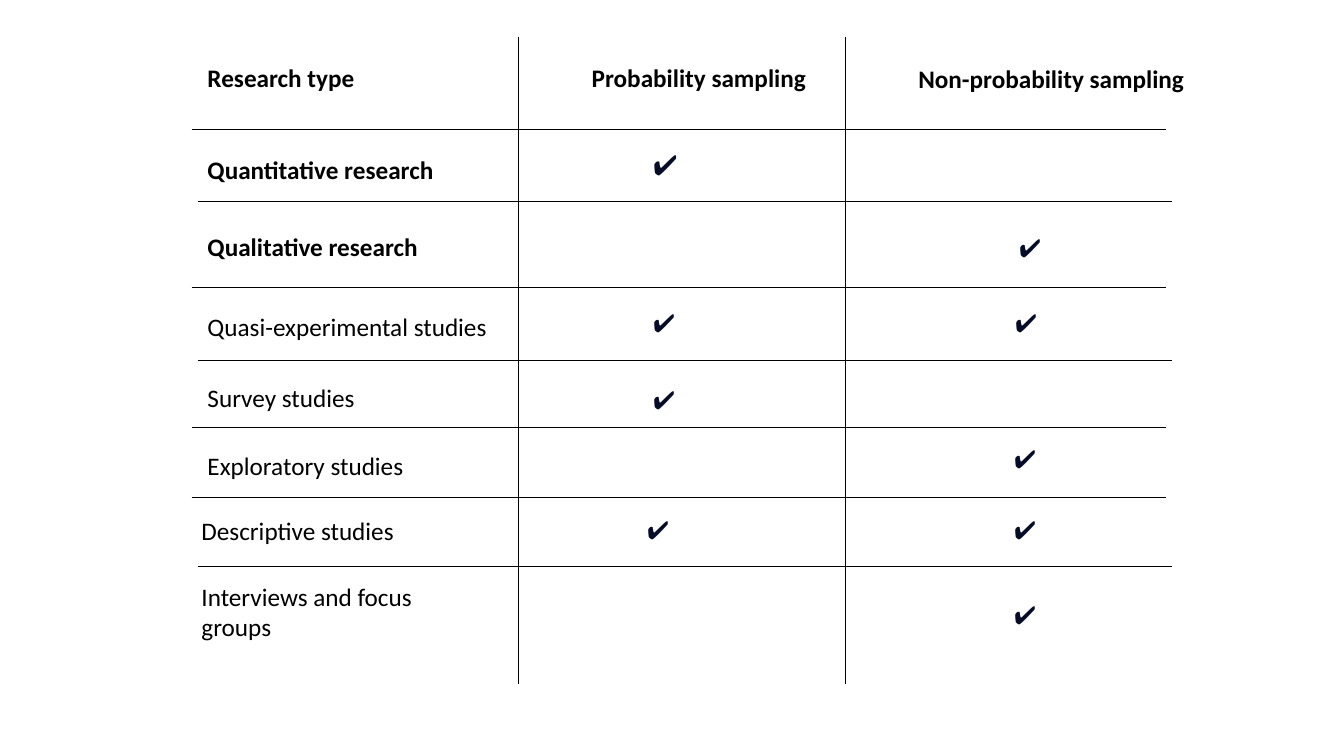
import pptx
import pptx.util
import pptx.dml.color
import pptx.enum.shapes
import pptx.enum.text
from lxml import etree
from pptx.util import Inches

BLACK = "000000"
NAVY = "040C28"
LABEL_WIDTH = 2.87
LINE_HEIGHT = 0.4
CHECK = "✔"

# text, left, top
HEADERS = [
    ("Research type", 1.96, 0.57),
    ("Probability sampling", 5.77, 0.57),
    ("Non-probability sampling", 9.01, 0.58),
]
# text, bold, left, top, width, height, check marks as (left, top, width, height, size)
ROWS = [
    ("Quantitative research", True, 1.96, 1.48, LABEL_WIDTH, LINE_HEIGHT,
     [(6.38, 1.41, 0.38, 0.44, 20)]),
    ("Qualitative research", True, 1.96, 2.25, LABEL_WIDTH, LINE_HEIGHT,
     [(10.01, 2.26, 0.47, LINE_HEIGHT, 18)]),
    ("Quasi-experimental studies", False, 1.96, 3.04, 2.97, LINE_HEIGHT,
     [(6.38, 3.0, 0.47, LINE_HEIGHT, 18), (9.97, 3.0, 0.47, LINE_HEIGHT, 18)]),
    ("Survey studies", False, 1.96, 3.74, LABEL_WIDTH, LINE_HEIGHT,
     [(6.38, 3.76, 0.47, LINE_HEIGHT, 18)]),
    ("Exploratory studies", False, 1.96, 4.42, LABEL_WIDTH, LINE_HEIGHT,
     [(9.96, 4.35, 0.47, LINE_HEIGHT, 18)]),
    ("Descriptive studies", False, 1.9, 5.06, LABEL_WIDTH, LINE_HEIGHT,
     [(6.32, 5.05, 0.47, LINE_HEIGHT, 18), (9.96, 5.05, 0.47, LINE_HEIGHT, 18)]),
    ("Interviews and focus groups", False, 1.9, 5.72, LABEL_WIDTH, 0.71,
     [(9.96, 5.9, 0.47, LINE_HEIGHT, 18)]),
]
COLUMN_RULES = [5.14, 8.38]
COLUMN_TOP, COLUMN_BOTTOM = 0.37, 6.79
# left, y
ROW_RULES = [(1.9, 1.28), (1.96, 2.0), (1.9, 2.85), (1.96, 3.58),
             (1.9, 4.24), (1.9, 4.93), (1.96, 5.62)]
ROW_RULE_LENGTH = 9.66


def color(value):
    return pptx.dml.color.RGBColor.from_string(value)


def add_rule(slide, x1, y1, x2, y2):
    rule = slide.shapes.add_connector(
        pptx.enum.shapes.MSO_CONNECTOR.STRAIGHT,
        Inches(x1), Inches(y1), Inches(x2), Inches(y2))
    rule.line.color.rgb = color(BLACK)
    rule.line.width = pptx.util.Pt(0.5)
    etree.SubElement(rule._element.spPr, pptx.oxml.ns.qn("a:effectLst"))


def add_text(slide, text, left, top, width, height, size=18, bold=False,
             font_name="Calibri", font_color=BLACK):
    box = slide.shapes.add_textbox(
        Inches(left), Inches(top), Inches(width), Inches(height))
    frame = box.text_frame
    frame.word_wrap = True
    frame.auto_size = pptx.enum.text.MSO_AUTO_SIZE.SHAPE_TO_FIT_TEXT
    frame.text = text
    font = frame.paragraphs[0].runs[0].font
    font.name = font_name
    font.size = pptx.util.Pt(size)
    font.bold = bold
    font.color.rgb = color(font_color)


def main():
    presentation = pptx.Presentation()
    presentation.slide_width = Inches(13.33)
    presentation.slide_height = Inches(7.5)
    slide = presentation.slides.add_slide(presentation.slide_layouts[6])

    for x in COLUMN_RULES:
        add_rule(slide, x, COLUMN_TOP, x, COLUMN_BOTTOM)
    for left, y in ROW_RULES:
        add_rule(slide, left, y, left + ROW_RULE_LENGTH, y)

    for text, left, top in HEADERS:
        add_text(slide, text, left, top, LABEL_WIDTH, LINE_HEIGHT, bold=True)
    for text, bold, left, top, width, height, checks in ROWS:
        add_text(slide, text, left, top, width, height, bold=bold)
        for check in checks:
            add_text(slide, CHECK, *check, font_name="Karla", font_color=NAVY)

    presentation.save("out.pptx")


if __name__ == "__main__":
    main()
